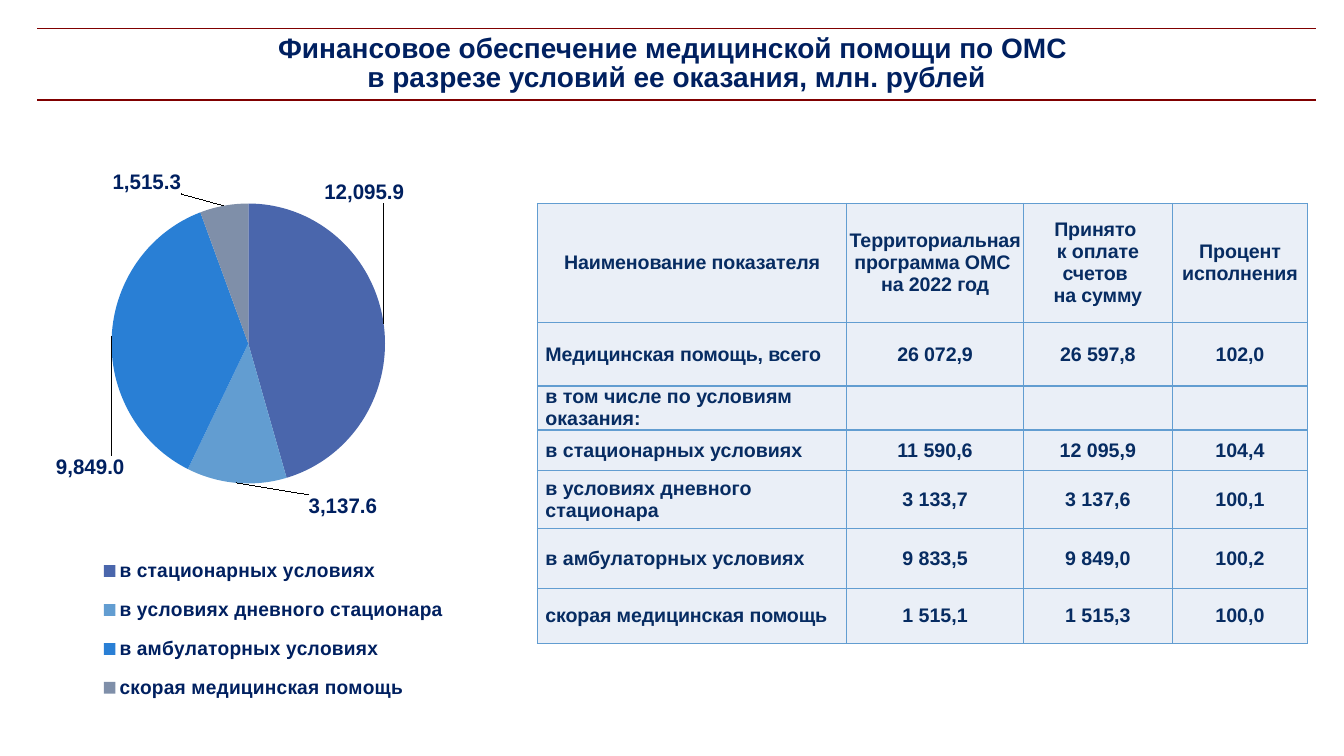
from dataclasses import dataclass

import pptx
import pptx.chart.data
import pptx.dml.color
import pptx.enum.chart
import pptx.enum.text
import pptx.oxml
import pptx.oxml.ns
import pptx.util

SLIDE_WIDTH = pptx.util.Inches(13.33)
SLIDE_HEIGHT = pptx.util.Inches(7.5)
NAVY = "002060"
TABLE_TEXT = "072C62"
BORDER = "629DD1"
CELL_FILL = "EAEFF7"
RULE = "800000"
FONT = "Arial"
NUMBER_FORMAT = "#,##0.0"
TIGHT_SPACING = "-10"
COLUMN_SHARES = (23.03, 13.13, 11.1, 10.05)
ROW_SHARES = (15.73, 8.4, 5.6, 5.33, 7.73, 7.87, 7.33)
TITLE = "Финансовое обеспечение медицинской помощи по ОМС \vв разрезе условий ее оказания, млн. рублей"
HEADERS = (
    "Наименование показателя",
    "Территориальная программа ОМС \nна 2022 год",
    "Принято \vк оплате счетов \vна сумму",
    "Процент исполнения",
)


@dataclass(frozen=True)
class Area:
    left: float
    top: float
    width: float
    height: float

    def box(self) -> tuple[int, int, int, int]:
        return across(self.left), down(self.top), across(self.width), down(self.height)


@dataclass(frozen=True)
class Condition:
    name: str
    planned: float
    paid: float
    percent: float
    color: str
    label_shift: tuple[float, float]

    def cells(self) -> tuple[str, ...]:
        return (self.name, *map(amount, (self.planned, self.paid, self.percent)))


CONDITIONS = (
    Condition("в стационарных условиях", 11590.6, 12095.9, 104.4, "4A66AC", (-0.14, -0.2)),
    Condition("в условиях дневного стационара", 3133.7, 3137.6, 100.1, "629DD1", (0.23, 0.01)),
    Condition("в амбулаторных условиях", 9833.5, 9849.0, 100.2, "297FD5", (0.04, 0.22)),
    Condition("скорая медицинская помощь", 1515.1, 1515.3, 100.0, "7F8FA9", (-0.09, -0.01)),
)
TITLE_AREA = Area(2.78, 3.75, 95.12, 9.47)
CHART_AREA = Area(2.78, 17.47, 35.41, 78.8)
TABLE_AREA = Area(39.98, 26.93, sum(COLUMN_SHARES), sum(ROW_SHARES))


def across(share: float) -> int:
    return round(SLIDE_WIDTH * share / 100)


def down(share: float) -> int:
    return round(SLIDE_HEIGHT * share / 100)


def amount(value: float) -> str:
    return f"{value:,.1f}".replace(",", " ").replace(".", ",")


def rgb(color: str) -> pptx.dml.color.RGBColor:
    return pptx.dml.color.RGBColor.from_string(color)


def set_font(font, size: float, color: str) -> None:
    font.name = FONT
    font.size = pptx.util.Pt(size)
    font.bold = True
    font.color.rgb = rgb(color)


def set_borders(cell, color: str, visible_sides: str) -> None:
    properties = cell._tc.get_or_add_tcPr()
    for side in "LRTB":
        paint = "<a:noFill/>"
        if side in visible_sides:
            paint = f'<a:solidFill><a:srgbClr val="{color}"/></a:solidFill>'
        properties.append(pptx.oxml.parse_xml(
            f'<a:ln{side} {pptx.oxml.ns.nsdecls("a")} w="{pptx.util.Pt(1)}">{paint}</a:ln{side}>'
        ))


def add_plain_table(slide, rows: int, columns: int, area: Area):
    table = slide.shapes.add_table(rows, columns, *area.box()).table
    table.first_row = table.horz_banding = False
    return table


def draw_title(slide) -> None:
    cell = add_plain_table(slide, 1, 1, TITLE_AREA).cell(0, 0)
    cell.text = TITLE
    cell.vertical_anchor = pptx.enum.text.MSO_ANCHOR.MIDDLE
    heading = cell.text_frame.paragraphs[0]
    heading.alignment = pptx.enum.text.PP_ALIGN.CENTER
    heading.line_spacing = 0.95
    set_font(heading.font, 20, NAVY)
    set_borders(cell, RULE, "TB")
    cell.fill.background()


def manual_layout(**settings: object):
    entries = "".join(f'<c:{key} val="{value}"/>' for key, value in settings.items())
    return pptx.oxml.parse_xml(
        f'<c:layout {pptx.oxml.ns.nsdecls("c")}><c:manualLayout>{entries}</c:manualLayout></c:layout>'
    )


def draw_chart(slide) -> None:
    data = pptx.chart.data.CategoryChartData(number_format=NUMBER_FORMAT)
    data.categories = [f"{condition.name} " for condition in CONDITIONS]
    data.add_series("Series 1", [condition.paid for condition in CONDITIONS])
    chart = slide.shapes.add_chart(
        pptx.enum.chart.XL_CHART_TYPE.PIE, *CHART_AREA.box(), data
    ).chart
    chart.has_title = False
    set_font(chart.font, 14, NAVY)
    chart.has_legend = True
    legend = chart.legend
    legend.position = pptx.enum.chart.XL_LEGEND_POSITION.RIGHT
    legend.include_in_layout = False
    set_font(legend.font, 14, NAVY)
    legend._element.find(pptx.oxml.ns.qn("c:legendPos")).addnext(
        manual_layout(xMode="edge", yMode="edge", x=0.09, y=0.69, w=0.8, h=0.29)
    )
    plot_area = chart._chartSpace.chart.plotArea
    for old_layout in plot_area.findall(pptx.oxml.ns.qn("c:layout")):
        plot_area.remove(old_layout)
    plot_area.insert(0, manual_layout(
        layoutTarget="inner", xMode="edge", yMode="edge", x=0.11, y=0.12, w=0.64, h=0.47
    ))
    plot = chart.plots[0]
    plot.vary_by_categories = True
    pie = plot.series[0]
    outside = pptx.enum.chart.XL_LABEL_POSITION.OUTSIDE_END
    labels = pie.data_labels
    labels.show_value = True
    labels.number_format = NUMBER_FORMAT
    labels.number_format_is_linked = False
    labels.position = outside
    set_font(labels.font, 15, NAVY)
    for index, condition in enumerate(CONDITIONS):
        point = pie.points[index]
        point.format.fill.solid()
        point.format.fill.fore_color.rgb = rgb(condition.color)
        point.format.line.fill.background()
        set_font(point.data_label.font, 15, NAVY)
        point.data_label.position = outside
        x, y = condition.label_shift
        label = labels._element.findall(pptx.oxml.ns.qn("c:dLbl"))[index]
        label.find(pptx.oxml.ns.qn("c:idx")).addnext(manual_layout(x=x, y=y))
        label.find(".//" + pptx.oxml.ns.qn("a:bodyPr")).set("wrap", "none")


def format_cell(cell, text: str, centered: bool, side_margin: float, tight: bool) -> None:
    cell.text = text
    cell.vertical_anchor = pptx.enum.text.MSO_ANCHOR.MIDDLE
    cell.margin_left = cell.margin_right = pptx.util.Inches(side_margin)
    cell.margin_top = cell.margin_bottom = 0
    for paragraph in cell.text_frame.paragraphs:
        if centered:
            paragraph.alignment = pptx.enum.text.PP_ALIGN.CENTER
        set_font(paragraph.font, 14, TABLE_TEXT)
        if tight:
            for run in paragraph.runs:
                run._r.get_or_add_rPr().set("spc", TIGHT_SPACING)
    set_borders(cell, BORDER, "LRTB")
    cell.fill.solid()
    cell.fill.fore_color.rgb = rgb(CELL_FILL)


def draw_table(slide) -> None:
    rows = (
        HEADERS,
        ("Медицинская помощь, всего", amount(26072.9), amount(26597.8), amount(102.0)),
        ("в том числе по условиям оказания:", "", "", ""),
        *(condition.cells() for condition in CONDITIONS),
    )
    table = add_plain_table(slide, len(rows), len(HEADERS), TABLE_AREA)
    for column, share in zip(table.columns, COLUMN_SHARES):
        column.width = across(share)
    for row, share in zip(table.rows, ROW_SHARES):
        row.height = down(share)
    for row_index, texts in enumerate(rows):
        for column_index, text in enumerate(texts):
            is_header = row_index == 0
            is_name = column_index == 0
            format_cell(
                table.cell(row_index, column_index),
                text,
                centered=is_header or not is_name,
                side_margin=0 if is_header and not is_name else 0.08,
                tight=row_index < 2 or (is_name and row_index == len(rows) - 1),
            )


def main() -> None:
    presentation = pptx.Presentation()
    presentation.slide_width = SLIDE_WIDTH
    presentation.slide_height = SLIDE_HEIGHT
    slide = presentation.slides.add_slide(presentation.slide_layouts[6])
    draw_table(slide)
    draw_title(slide)
    draw_chart(slide)
    presentation.save("out.pptx")


if __name__ == "__main__":
    main()
